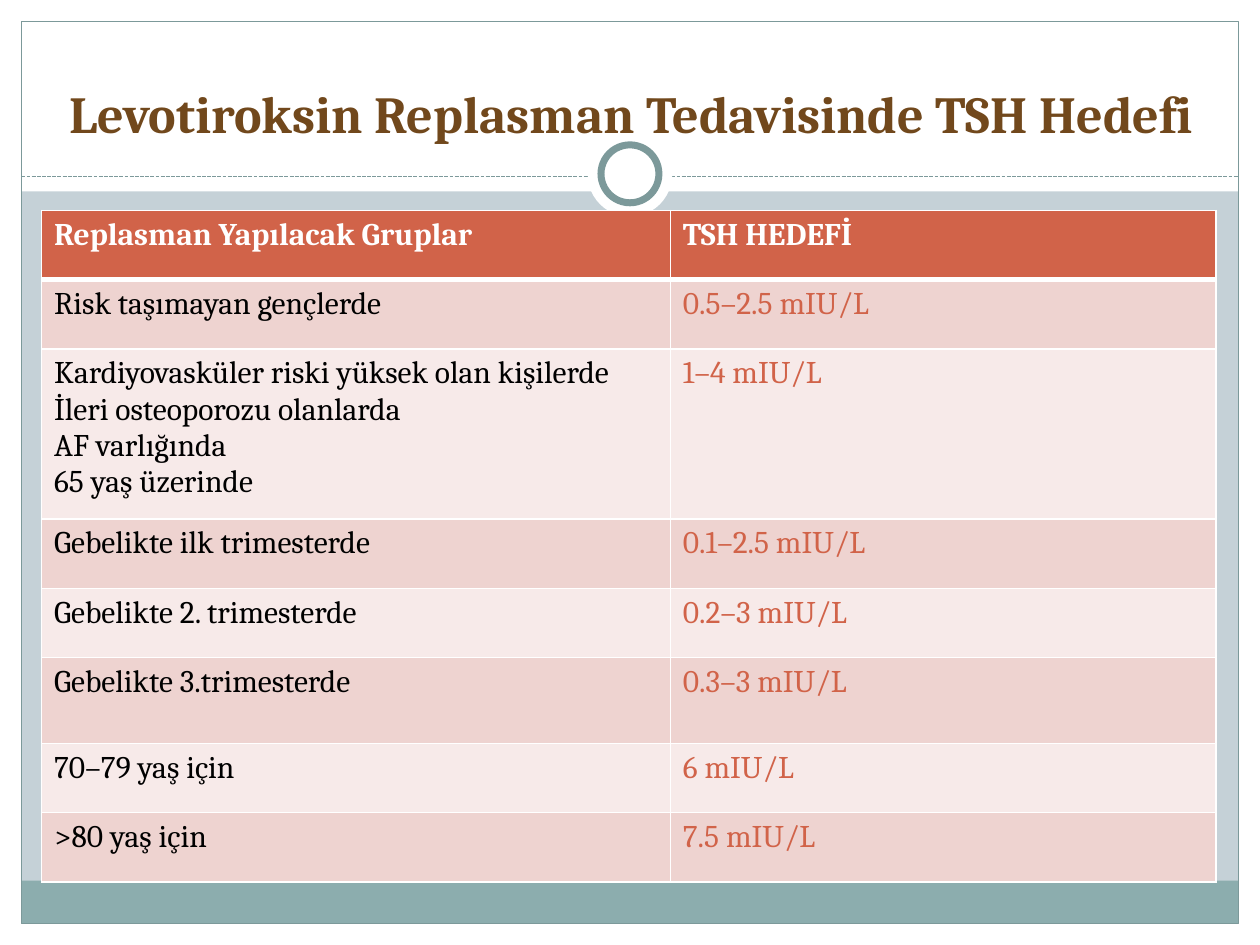
import pptx
import pptx.util
import pptx.dml.color
import pptx.enum.dml
import pptx.enum.shapes
import pptx.enum.text
import pptx.oxml.ns
import lxml.etree

RGBColor = pptx.dml.color.RGBColor
WHITE = RGBColor(0xFF, 0xFF, 0xFF)
BLACK = RGBColor(0x00, 0x00, 0x00)
MIST = RGBColor(0xC5, 0xD1, 0xD7)
TEAL = RGBColor(0x8C, 0xAD, 0xAE)
SLATE = RGBColor(0x7C, 0x99, 0x9A)
BROWN = RGBColor(0x71, 0x48, 0x1C)
RUST = RGBColor(0xD1, 0x63, 0x49)
ROSE = RGBColor(0xEE, 0xD3, 0xD0)
BLUSH = RGBColor(0xF7, 0xEA, 0xE9)

FONT = "Cambria"
KIND = pptx.enum.shapes.MSO_SHAPE
WIDE, HIGH = 100, 75
EDGE = 1.7
COLS = [49.9, 43.3]
ROWS = [5.5, 5.5, 13.5, 5.5, 5.5, 6.8, 5.5, 5.5]
GOALS = [
    (["Replasman Yapılacak Gruplar"], "TSH HEDEFİ"),
    (["Risk taşımayan gençlerde"], "0.5–2.5 mIU/L"),
    (["Kardiyovasküler riski yüksek olan kişilerde",
      "İleri osteoporozu olanlarda", "AF varlığında", "65 yaş üzerinde"],
     "1–4 mIU/L"),
    (["Gebelikte ilk trimesterde"], "0.1–2.5 mIU/L"),
    (["Gebelikte 2. trimesterde"], "0.2–3 mIU/L"),
    (["Gebelikte 3.trimesterde"], "0.3–3 mIU/L"),
    (["70–79 yaş için"], "6 mIU/L"),
    ([">80 yaş için"], "7.5 mIU/L"),
]


def grid(*units):
    return [pptx.util.Inches(unit / 10) for unit in units]


def add_shape(slide, kind, box, fill=None, line=None, width=0.75):
    shape = slide.shapes.add_shape(kind, *grid(*box))
    shape.shadow.inherit = False
    if fill is None:
        shape.fill.background()
    else:
        shape.fill.solid()
        shape.fill.fore_color.rgb = fill
    if line is None:
        shape.line.fill.background()
    else:
        shape.line.color.rgb = line
        shape.line.width = pptx.util.Pt(width)


def add_rule(slide, left, right, top):
    rule = slide.shapes.add_connector(
        pptx.enum.shapes.MSO_CONNECTOR.STRAIGHT, *grid(left, top, right, top))
    rule.line.color.rgb = SLATE
    rule.line.width = pptx.util.Pt(0.75)
    rule.line.dash_style = pptx.enum.dml.MSO_LINE.SQUARE_DOT
    lxml.etree.SubElement(rule.element.spPr, pptx.oxml.ns.qn("a:effectLst"))


def add_run(para, text, size, color, bold):
    run = para.add_run()
    run.text = text
    run.font.name = FONT
    run.font.size = pptx.util.Pt(size)
    run.font.color.rgb = color
    run.font.bold = bold


def add_frame(slide):
    rect = KIND.RECTANGLE
    inner = WIDE - 2 * EDGE
    add_shape(slide, rect, (0, HIGH - EDGE, WIDE, EDGE), WHITE)
    add_shape(slide, rect, (0, 0, WIDE, 15.2), WHITE)
    for left in (0, WIDE - EDGE):
        add_shape(slide, rect, (left, 0, EDGE, HIGH), WHITE)
    add_shape(slide, rect, (EDGE, 69.9, inner, 3.4), TEAL)
    add_shape(slide, rect, (EDGE, EDGE, inner, HIGH - 2 * EDGE), line=SLATE)
    add_rule(slide, EDGE, WIDE - EDGE, 14)
    add_shape(slide, KIND.OVAL, (46.65, 10.5, 6.7, 6.7), WHITE)
    add_shape(slide, KIND.OVAL, (47.7, 11.5, 4.6, 4.6), WHITE, SLATE, 4)


def set_title(slide, text):
    title = slide.shapes.title
    title.left, title.top, title.width, title.height = grid(3.5, 3.6, 93.3, 8.3)
    title.element.getparent().append(title.element)
    frame = title.text_frame
    frame.word_wrap = True
    frame.auto_size = pptx.enum.text.MSO_AUTO_SIZE.NONE
    frame.vertical_anchor = pptx.enum.text.MSO_ANCHOR.BOTTOM
    para = frame.paragraphs[0]
    para.alignment = pptx.enum.text.PP_ALIGN.CENTER
    add_run(para, text, 29.7, BROWN, True)


def set_edges(cell, row):
    heavy = {(0, "B"), (1, "T")}
    props = cell._tc.get_or_add_tcPr()
    for side in "LRTB":
        width = 3 if (row, side) in heavy else 1
        line = lxml.etree.SubElement(
            props, pptx.oxml.ns.qn("a:ln" + side), w=str(pptx.util.Pt(width)))
        fill = lxml.etree.SubElement(line, pptx.oxml.ns.qn("a:solidFill"))
        lxml.etree.SubElement(
            fill, pptx.oxml.ns.qn("a:srgbClr"), val=str(WHITE))


def set_cell(cell, row, lines, fill, color):
    set_edges(cell, row)
    cell.fill.solid()
    cell.fill.fore_color.rgb = fill
    frame = cell.text_frame
    for index, text in enumerate(lines):
        para = frame.add_paragraph() if index else frame.paragraphs[0]
        add_run(para, text, 18, color, row == 0)


def add_goals(slide):
    table = slide.shapes.add_table(
        len(ROWS), len(COLS), *grid(3.3, 16.7, sum(COLS), sum(ROWS))).table
    for col, width in zip(table.columns, grid(*COLS)):
        col.width = width
    for row, height in zip(table.rows, grid(*ROWS)):
        row.height = height
    for row, (group, goal) in enumerate(GOALS):
        fill = RUST if row == 0 else ROSE if row % 2 else BLUSH
        inks = (BLACK, RUST) if row else (WHITE, WHITE)
        for col, lines in enumerate((group, [goal])):
            set_cell(table.cell(row, col), row, lines, fill, inks[col])


def main():
    deck = pptx.Presentation()
    deck.slide_width, deck.slide_height = grid(WIDE, HIGH)
    slide = deck.slides.add_slide(deck.slide_layouts[5])
    slide.background.fill.solid()
    slide.background.fill.fore_color.rgb = MIST
    add_frame(slide)
    set_title(slide, "Levotiroksin Replasman Tedavisinde TSH Hedefi")
    add_goals(slide)
    deck.save("out.pptx")


if __name__ == "__main__":
    main()
